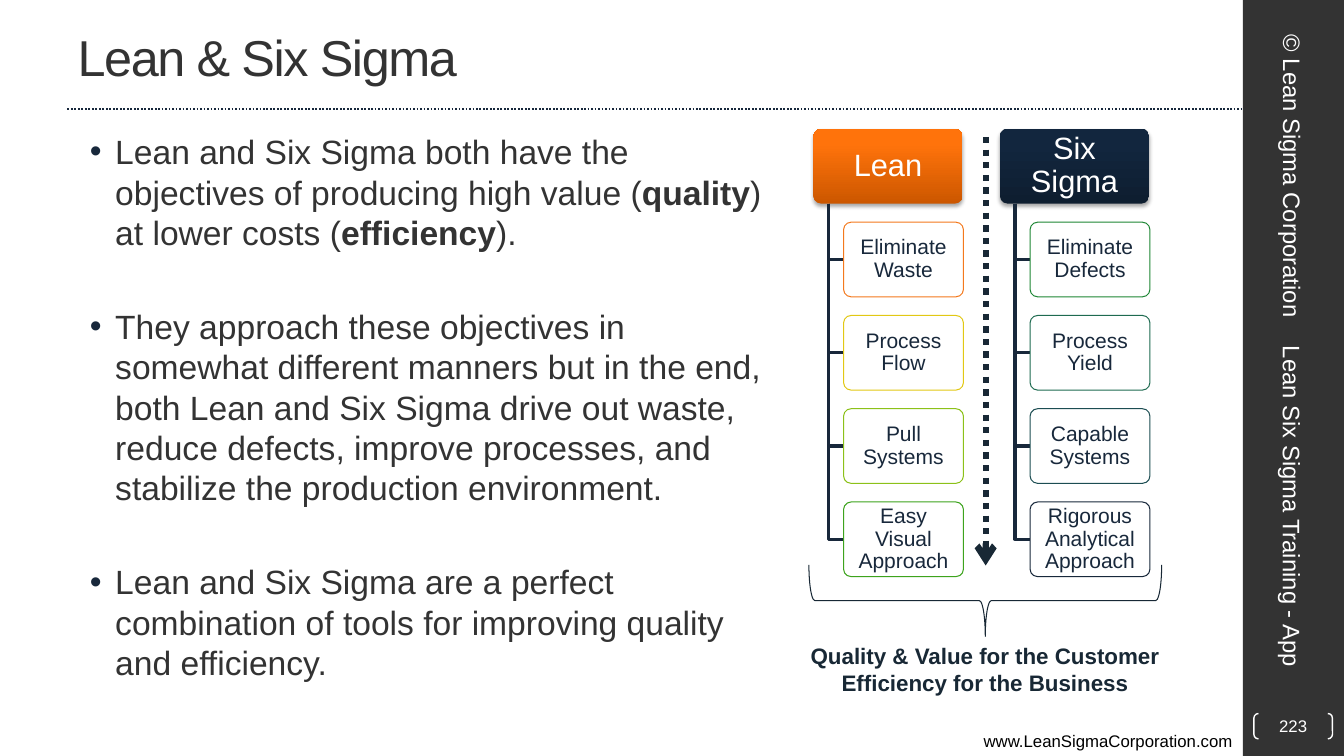
from lxml import etree
from pptx import Presentation
from pptx.dml.color import RGBColor
from pptx.enum.dml import MSO_LINE
from pptx.enum.shapes import MSO_CONNECTOR, MSO_SHAPE
from pptx.enum.text import MSO_ANCHOR, MSO_AUTO_SIZE, PP_ALIGN
from pptx.oxml.ns import qn
from pptx.util import Cm, Pt

LEFT, MID, RIGHT = PP_ALIGN.LEFT, PP_ALIGN.CENTER, PP_ALIGN.RIGHT
TOP, CENTER = MSO_ANCHOR.TOP, MSO_ANCHOR.MIDDLE
NOFIT, DOTS, STRAIGHT = MSO_AUTO_SIZE.NONE, MSO_LINE.ROUND_DOT, MSO_CONNECTOR.STRAIGHT
RECT, ROUND = MSO_SHAPE.RECTANGLE, MSO_SHAPE.ROUNDED_RECTANGLE
PAIR, BRACE = MSO_SHAPE.DOUBLE_BRACKET, MSO_SHAPE.RIGHT_BRACE

COLORS = {
    "white": "FFFFFF", "black": "000000", "gray": "333333", "rule": "17273B",
    "navy": "18283B", "slate": "182835", "rust": "CC5700", "flame": "FF730B",
    "night": "0E1E30", "dusk": "12263E", "orange": "F4791D", "gold": "E2C814",
    "lime": "8CC119", "leaf": "3DA31D", "green": "1E8634", "jade": "1E6B50",
    "teal": "1C4D52",
}

BODY = [
    "Lean and Six Sigma both have the objectives of producing high value "
    "(*quality*) at lower costs (*efficiency*).",
    "They approach these objectives in somewhat different manners but in the "
    "end, both Lean and Six Sigma drive out waste, reduce defects, improve "
    "processes, and stabilize the production environment.",
    "Lean and Six Sigma are a perfect combination of tools for improving "
    "quality and efficiency.",
]
TREES = [
    ("Lean", 20.5, ("rust", "flame"), [
        ("Eliminate Waste", "orange"), ("Process Flow", "gold"),
        ("Pull Systems", "lime"), ("Easy Visual Approach", "leaf")]),
    ("Six Sigma", 25.2, ("night", "dusk"), [
        ("Eliminate Defects", "green"), ("Process Yield", "jade"),
        ("Capable Systems", "teal"), ("Rigorous Analytical Approach", "navy")]),
]
TREE_TOP, STEP, HIGH = 3.25, 2.35, 1.88
HEAD_WIDE, LEAF_WIDE, INDENT, STEM = 3.76, 3.02, 0.76, 0.38


def rgb(name):
    """Return the named colour."""
    return RGBColor.from_string(COLORS[name])


def place(shape, left, top, wide, high):
    """Move and size a shape in centimetres."""
    shape.left, shape.top = Cm(left), Cm(top)
    shape.width, shape.height = Cm(wide), Cm(high)


def bullet(para):
    """Give a paragraph a hanging round bullet."""
    props = para._p.get_or_add_pPr()
    props.set("marL", str(Cm(0.95)))
    props.set("indent", str(Cm(-0.64)))
    tint = etree.SubElement(props, qn("a:buClr"))
    etree.SubElement(tint, qn("a:srgbClr")).set("val", COLORS["navy"])
    etree.SubElement(props, qn("a:buFont")).set("typeface", "Arial")
    etree.SubElement(props, qn("a:buChar")).set("char", "•")


def write(shape, words, size, color, align=LEFT, anchor=TOP, bold=False,
          inset=None, lead=None, gap=0, dot=False, track=None):
    """Fill a shape with formatted paragraphs; asterisks mark bold words."""
    frame = shape.text_frame
    frame.word_wrap = True
    frame.auto_size = NOFIT
    frame.vertical_anchor = anchor
    if inset is not None:
        frame.margin_left = frame.margin_right = Cm(inset)
        frame.margin_top = frame.margin_bottom = Cm(inset)
    for row, line in enumerate(words.split("\n")):
        para = frame.add_paragraph() if row else frame.paragraphs[0]
        para.alignment = align
        para.space_before = Pt(gap if row else 0)
        if lead:
            para.line_spacing = lead
        if dot:
            bullet(para)
        for turn, part in enumerate(line.split("*")):
            run = para.add_run()
            run.text = part
            font = run.font
            font.name, font.size = "Arial", Pt(size)
            font.bold = bold or turn % 2 == 1
            font.color.rgb = rgb(color)
            if track:
                run._r.get_or_add_rPr().set("spc", str(track))


def label(slide, at, words, size, color, turn=0, **form):
    """Add a text box."""
    box = slide.shapes.add_textbox(*map(Cm, at))
    box.rotation = turn
    write(box, words, size, color, **form)


def paint(shape, fill=None, line=None, width=0.75):
    """Set a shape's fill and line and drop its shadow."""
    shape.shadow.inherit = False
    if fill:
        shape.fill.solid()
        shape.fill.fore_color.rgb = rgb(fill)
    else:
        shape.fill.background()
    if line:
        shape.line.color.rgb = rgb(line)
        shape.line.width = Pt(width)
    else:
        shape.line.fill.background()


def block(slide, kind, at, adjust=None, **look):
    """Add a painted preset shape."""
    shape = slide.shapes.add_shape(kind, *map(Cm, at))
    if adjust is not None:
        shape.adjustments[0] = adjust
    paint(shape, **look)
    return shape


def dotted(slide, ends, color, width, arrow=False):
    """Add a dotted line, with an arrowhead if wanted."""
    link = slide.shapes.add_connector(STRAIGHT, *map(Cm, ends))
    link.line.color.rgb = rgb(color)
    link.line.width = Pt(width)
    link.line.dash_style = DOTS
    props = link._element.spPr
    if arrow:
        etree.SubElement(props.find(qn("a:ln")), qn("a:tailEnd")).set("type", "arrow")
    etree.SubElement(props, qn("a:effectLst"))


def shade(shape, low, high):
    """Give a heading its gradient and soft shadow."""
    shape.fill.gradient()
    shape.fill.gradient_angle = 90
    for stop, name, spot in zip(shape.fill.gradient_stops, (low, high), (0, 0.8)):
        stop.color.rgb = rgb(name)
        stop.position = spot
    effects = shape._element.spPr.find(qn("a:effectLst"))
    cast = etree.SubElement(effects, qn("a:outerShdw"), blurRad=str(Pt(3.1)),
                            dist=str(Pt(1.8)), dir="5400000", rotWithShape="0")
    tint = etree.SubElement(cast, qn("a:srgbClr"), val=COLORS["black"])
    etree.SubElement(tint, qn("a:alpha"), val="35000")


def branch(slide, left, top, end):
    """Draw an elbow from a heading down to a leaf."""
    pen = slide.shapes.build_freeform(Cm(left), Cm(top))
    pen.add_line_segments([(Cm(left), Cm(end)),
                           (Cm(left + INDENT - STEM), Cm(end))], close=False)
    paint(pen.convert_to_shape(), line="navy", width=2.25)


def tree(slide, name, left, tones, leaves):
    """Draw a heading with its leaves below."""
    head = block(slide, ROUND, (left, TREE_TOP, HEAD_WIDE, HIGH), 0.1)
    shade(head, *tones)
    write(head, name, 22, "white", align=MID, anchor=CENTER, inset=0.15, lead=0.9)
    for row, (words, color) in enumerate(leaves, 1):
        top = TREE_TOP + STEP * row
        branch(slide, left + STEM, TREE_TOP + HIGH, top + HIGH / 2)
        leaf = block(slide, ROUND, (left + INDENT, top, LEAF_WIDE, HIGH), 0.1,
                     fill="white", line=color)
        write(leaf, words, 15, "navy", align=MID, anchor=CENTER, inset=0.12, lead=0.9)


def main():
    """Build and save the slide."""
    deck = Presentation()
    deck.slide_width, deck.slide_height = Cm(33.87), Cm(19.05)
    slide = deck.slides.add_slide(deck.slide_layouts[1])
    title, body = slide.placeholders
    place(title, 1.7, 0.08, 28.22, 2.67)
    write(title, "Lean & Six Sigma", 36, "gray", anchor=CENTER, track=-100)
    place(body, 1.7, 3.18, 18.08, 15.24)
    write(body, "\n".join(BODY), 24, "gray", gap=38.4, dot=True)

    block(slide, RECT, (31.32, 0, 2.55, 19.05), fill="gray")
    dotted(slide, (1.7, 2.74, 31.32, 2.74), "rule", 1.25)
    label(slide, (0, 18.29, 31.32, 0.76), "www.LeanSigmaCorporation.com", 12,
          "black", align=RIGHT)
    label(slide, (28.55, 3.76, 8.05, 1.35), "© Lean Sigma Corporation", 17,
          "white", turn=90, align=MID, anchor=CENTER)
    label(slide, (27.91, 12.45, 9.32, 1.35), "Lean Six Sigma Training - App", 17,
          "white", turn=90, anchor=CENTER)
    page = block(slide, PAIR, (31.6, 17.98, 1.98, 0.64), 0.18, line="white", width=1)
    write(page, "223", 12, "white", align=MID, anchor=CENTER, inset=0)

    for parts in TREES:
        tree(slide, *parts)
    dotted(slide, (24.84, 3.45, 24.84, 14.25), "slate", 4.5, arrow=True)
    brace = block(slide, BRACE, (23.93, 10.69, 1.8, 8.89), line="slate")
    brace.rotation = 90
    label(slide, (19.96, 16.05, 9.73, 1.63),
          "Quality & Value for the Customer\nEfficiency for the Business", 16,
          "slate", align=MID, bold=True)
    deck.save("out.pptx")


if __name__ == "__main__":
    main()
